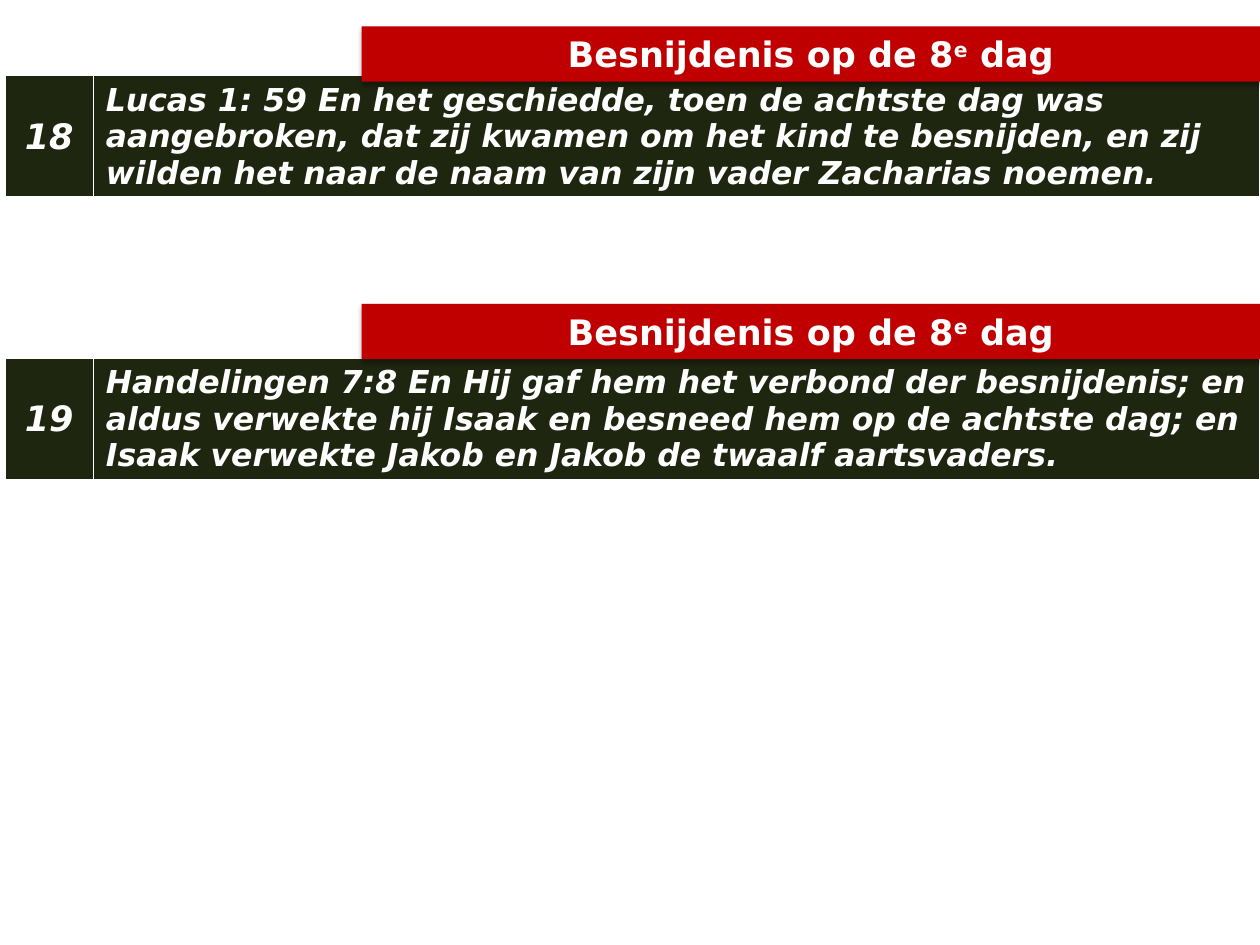
import dataclasses

import pptx
import pptx.dml.color
import pptx.enum.shapes
import pptx.enum.text
import pptx.oxml
import pptx.oxml.ns
import pptx.util

COLORS = {"text": "FFFFFF", "border": "FFFFFF", "cell": "1F2610",
          "banner": "C00000", "shadow": "000000"}
FONT = "DejaVu Sans"
WIDTH, HEIGHT = pptx.util.Inches(10), pptx.util.Inches(7.5)

# Shares of the slide's width and height
TABLE_LEFT = 0.004
COLUMNS = (0.07, 0.926)
ROW_HEIGHT = 0.13
BANNER_LEFT = 0.287
BANNER_HEIGHT = 0.0585
BORDERS = {"lnL": 1, "lnR": 1, "lnT": 1, "lnB": 3}
TITLE = (("Besnijdenis op de 8", False), ("e", True), (" dag", False))


@dataclasses.dataclass
class Verse:
    number: str
    text: str
    banner_top: float
    table_top: float


VERSES = (
    Verse("18", "Lucas 1: 59 En het geschiedde, toen de achtste dag was "
          "aangebroken, dat zij kwamen om het kind te besnijden, en zij "
          "wilden het naar de naam van zijn vader Zacharias noemen.",
          0.028, 0.08),
    Verse("19", "Handelingen 7:8 En Hij gaf hem het verbond der besnijdenis; "
          "en aldus verwekte hij Isaak en besneed hem op de achtste dag; en "
          "Isaak verwekte Jakob en Jakob de twaalf aartsvaders.",
          0.3215, 0.379),
)


def rgb(name: str) -> pptx.dml.color.RGBColor:
    return pptx.dml.color.RGBColor.from_string(COLORS[name])


def across(share: float) -> int:
    return round(WIDTH * share)


def down(share: float) -> int:
    return round(HEIGHT * share)


def add_run(p, text: str, size: float, italic: bool = False,
            superscript: bool = False) -> None:
    r = p.add_run()
    r.text = text
    r.font.name = FONT
    r.font.size = pptx.util.Pt(size)
    r.font.bold = True
    r.font.italic = italic
    r.font.color.rgb = rgb("text")
    if superscript:
        r._r.get_or_add_rPr().set("baseline", "30000")


def add_borders(cell) -> None:
    props = cell._tc.get_or_add_tcPr()
    for i, (tag, points) in enumerate(BORDERS.items()):
        props.insert(i, pptx.oxml.parse_xml(
            f'<a:{tag} {pptx.oxml.ns.nsdecls("a")} w="{pptx.util.Pt(points)}">'
            f'<a:solidFill><a:srgbClr val="{COLORS["border"]}"/></a:solidFill>'
            f'</a:{tag}>'))


def add_verse(s, verse: Verse) -> None:
    table = s.shapes.add_table(
        1, len(COLUMNS), across(TABLE_LEFT), down(verse.table_top),
        across(sum(COLUMNS)), down(ROW_HEIGHT)).table
    for column, share in zip(table.columns, COLUMNS):
        column.width = across(share)
    number, text = table.rows[0].cells
    for cell in (number, text):
        cell.fill.solid()
        cell.fill.fore_color.rgb = rgb("cell")
        add_borders(cell)
    number.vertical_anchor = pptx.enum.text.MSO_ANCHOR.MIDDLE
    p = number.text_frame.paragraphs[0]
    p.alignment = pptx.enum.text.PP_ALIGN.CENTER
    add_run(p, verse.number, 20, italic=True)
    add_run(text.text_frame.paragraphs[0], verse.text, 18, italic=True)


def add_banner(s, top: float) -> None:
    sp = s.shapes.add_shape(
        pptx.enum.shapes.MSO_SHAPE.RECTANGLE, across(BANNER_LEFT), down(top),
        across(1 - BANNER_LEFT), down(BANNER_HEIGHT))
    sp.fill.solid()
    sp.fill.fore_color.rgb = rgb("banner")
    sp.line.fill.background()
    # Soft shadow straight below the banner
    sp.shadow.inherit = False
    effects = sp._element.spPr.find(pptx.oxml.ns.qn("a:effectLst"))
    effects.append(pptx.oxml.parse_xml(
        f'<a:outerShdw {pptx.oxml.ns.nsdecls("a")} '
        f'blurRad="{pptx.util.Pt(3.1)}" dist="{pptx.util.Pt(1.8)}" '
        f'dir="5400000" rotWithShape="0">'
        f'<a:srgbClr val="{COLORS["shadow"]}"><a:alpha val="35000"/>'
        f'</a:srgbClr></a:outerShdw>'))
    tf = sp.text_frame
    tf.word_wrap = True
    tf.auto_size = pptx.enum.text.MSO_AUTO_SIZE.SHAPE_TO_FIT_TEXT
    tf.vertical_anchor = pptx.enum.text.MSO_ANCHOR.TOP
    p = tf.paragraphs[0]
    p.alignment = pptx.enum.text.PP_ALIGN.CENTER
    for text, superscript in TITLE:
        add_run(p, text, 20, superscript=superscript)


def main() -> None:
    prs = pptx.Presentation()
    prs.slide_width, prs.slide_height = WIDTH, HEIGHT
    s = prs.slides.add_slide(prs.slide_layouts[6])
    # Verses first, so that the banners lie on top
    for verse in VERSES:
        add_verse(s, verse)
    for verse in VERSES:
        add_banner(s, verse.banner_top)
    prs.save("out.pptx")


if __name__ == "__main__":
    main()
